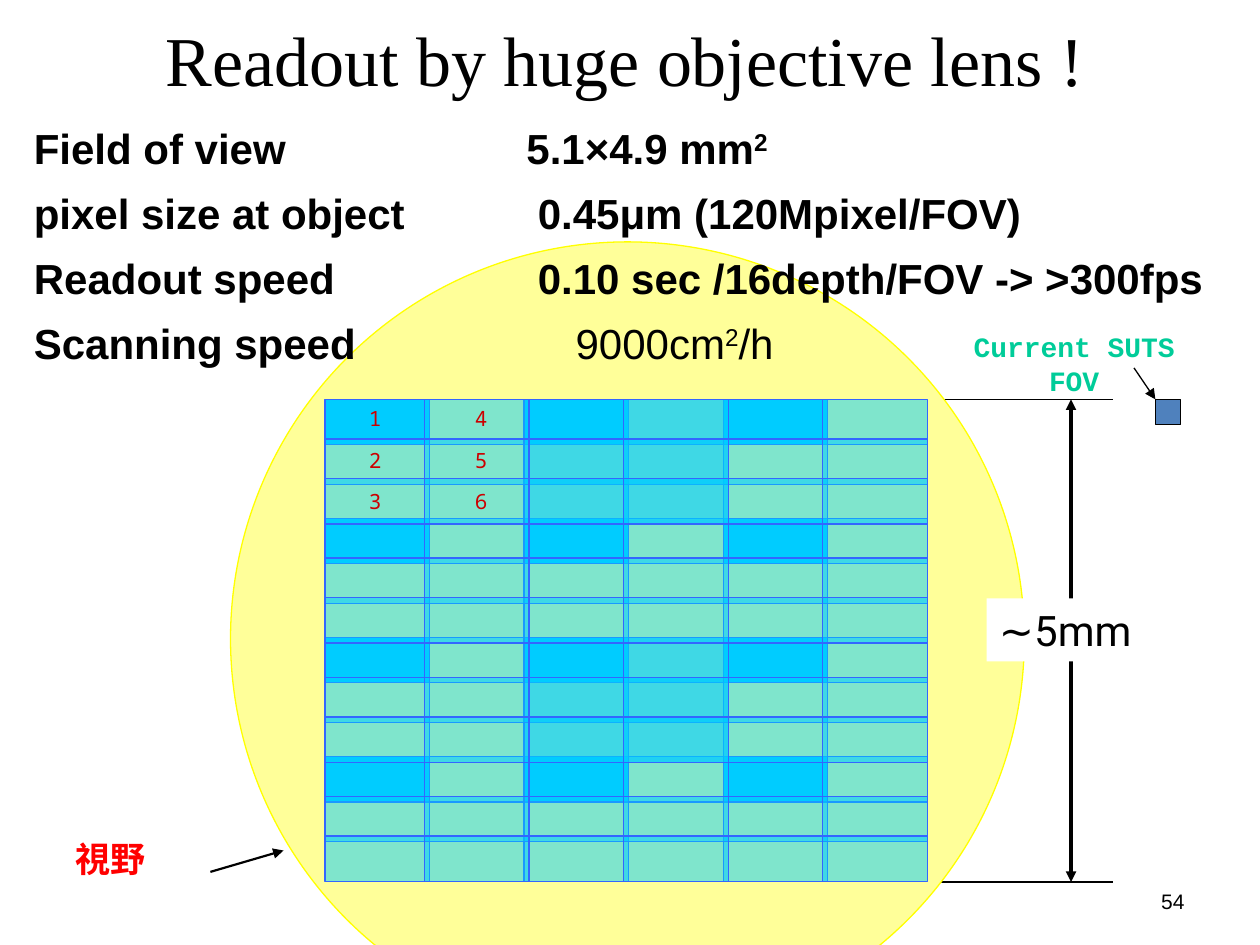
from lxml import etree
from pptx import Presentation
from pptx.dml.color import RGBColor
from pptx.enum.shapes import MSO_CONNECTOR, MSO_SHAPE
from pptx.enum.text import MSO_ANCHOR, PP_ALIGN
from pptx.oxml.ns import qn
from pptx.util import Inches, Pt

BLACK = RGBColor(0x00, 0x00, 0x00)
WHITE = RGBColor(0xFF, 0xFF, 0xFF)
PALE_YELLOW = RGBColor(0xFF, 0xFF, 0x99)
YELLOW = RGBColor(0xFF, 0xFF, 0x00)
SKY = RGBColor(0x00, 0xCC, 0xFF)
TILE_EDGE = RGBColor(0x33, 0x66, 0xFF)
STEEL = RGBColor(0x4F, 0x81, 0xBD)
GREEN = RGBColor(0x00, 0xCC, 0x99)
RED = RGBColor(0xFF, 0x00, 0x00)
DARK_RED = RGBColor(0xCC, 0x00, 0x00)

deck = Presentation()
deck.slide_width = Inches(10)
deck.slide_height = Inches(7.5)
page = deck.slides.add_slide(deck.slide_layouts[6])


def add_text(text, left, top, width, height, font_name, size, color=BLACK,
             align=PP_ALIGN.LEFT, bold=False):
    box = page.shapes.add_textbox(Inches(left), Inches(top), Inches(width), Inches(height))
    box.text_frame.word_wrap = True
    para = box.text_frame.paragraphs[0]
    para.text = text
    para.alignment = align
    para.font.name = font_name
    para.font.size = Pt(size)
    para.font.color.rgb = color
    para.font.bold = bold
    return box


def add_block(preset, left, top, width, height, fill, edge):
    block = page.shapes.add_shape(preset, Inches(left), Inches(top), Inches(width), Inches(height))
    block.shadow.inherit = False
    block.fill.solid()
    block.fill.fore_color.rgb = fill
    block.line.color.rgb = edge
    block.line.width = Pt(0.75)
    return block


add_text("Readout by huge objective lens !", 0, 0.08, 9.92, 0.77,
         "Times New Roman", 40, align=PP_ALIGN.CENTER)

# Lines: start x, start y, end x, end y, width, arrowheads
LINES = [
    (8.5, 3.17, 8.5, 7, 2, ("headEnd", "tailEnd")),
    (2.75, 3.17, 8.83, 3.17, 0.75, ()),
    (2.75, 7, 8.83, 7, 0.75, ()),
    (9, 2.92, 9.17, 3.17, 0.75, ("tailEnd",)),
    (1.67, 6.92, 2.25, 6.75, 1.25, ("tailEnd",)),
]
for x1, y1, x2, y2, width, ends in LINES:
    line = page.shapes.add_connector(MSO_CONNECTOR.STRAIGHT, Inches(x1), Inches(y1),
                                     Inches(x2), Inches(y2))
    line.line.color.rgb = BLACK
    line.line.width = Pt(width)
    outline = line.line._get_or_add_ln()
    for end in ends:
        etree.SubElement(outline, qn(f"a:{end}"), type="triangle")
    etree.SubElement(line._element.spPr, qn("a:effectLst"))

# Lens field, height label and current field of view
add_block(MSO_SHAPE.OVAL, 1.83, 1.92, 6.3, 6.3, PALE_YELLOW, YELLOW)
height_label = add_text("∼5mm", 7.83, 4.75, 1.33, 0.5, "Roboto", 24)
height_label.fill.solid()
height_label.fill.fore_color.rgb = WHITE
add_block(MSO_SHAPE.RECTANGLE, 9.17, 3.17, 0.2, 0.2, STEEL, BLACK)
add_text("Current SUTS FOV", 7.38, 2.57, 2.29, 0.37, "Courier New", 16, GREEN,
         PP_ALIGN.CENTER, True)
add_text("視野", 0, 6.6, 1.75, 0.44, "Courier New", 20, RED, PP_ALIGN.CENTER, True)

# Specifications: label, tab stop, value, superscript, rest, bold value
SPECS = [
    ("Field of view", 3.91, "5.1×4.9 mm", "2", "", True),
    ("pixel size at object", 4, "0.45μm (120Mpixel/FOV)", "", "", True),
    ("Readout speed", 4, "0.10 sec /16depth/FOV -> >300fps", "", "", True),
    ("Scanning speed", 4.3, "9000cm", "2", "/h", False),
]
spec_box = page.shapes.add_textbox(Inches(0.17), Inches(0.92), Inches(9.75), Inches(2.08))
spec_box.text_frame.word_wrap = True
for index, (label, stop, value, power, rest, bold) in enumerate(SPECS):
    para = spec_box.text_frame.paragraphs[0] if index == 0 else spec_box.text_frame.add_paragraph()
    if index:
        para.space_before = Pt(8.4)
    tabs = etree.SubElement(para._p.get_or_add_pPr(), qn("a:tabLst"))
    etree.SubElement(tabs, qn("a:tab"), pos=str(Inches(stop)), algn="l")
    para.font.name = "Arial"
    para.font.size = Pt(24)
    para.font.color.rgb = BLACK
    for text, is_bold in ((label + "\t", True), (value, bold), (power, bold), (rest, bold)):
        if text:
            span = para.add_run()
            span.text = text
            span.font.bold = is_bold
            if text == power:
                span.font._element.set("baseline", "30000")

# Overlapping tiles: 6 columns by 12 rows, laid down in six interleaved passes
GRID_LEFT, GRID_TOP = 2.58, 3.17
COLUMN_STEP, ROW_STEP = 0.79, 0.315
PASSES = [(0, 0), (1, 0), (0, 1), (0, 2), (1, 1), (1, 2)]
for first_column, first_row in PASSES:
    for column in range(first_column, 6, 2):
        for row in range(first_row, 12, 3):
            opaque = (first_column, first_row) == (0, 0)
            doubled = not opaque and column in (2, 3) and row in (0, 1, 2, 6, 7, 8)
            for _ in range(2 if doubled else 1):
                tile = add_block(MSO_SHAPE.RECTANGLE, GRID_LEFT + column * COLUMN_STEP,
                                 GRID_TOP + row * ROW_STEP, 0.83, 0.36, SKY, TILE_EDGE)
                if not opaque:
                    tint = tile._element.spPr.find(qn("a:solidFill"))[0]
                    etree.SubElement(tint, qn("a:alpha"), val="50000")

for number in range(6):
    column, row = divmod(number, 3)
    add_text(str(number + 1), 2.83 + column * 0.84, 3.17 + row * 0.33, 0.3, 0.3,
             "Noto Sans Mono", 12, DARK_RED)

page_number = add_text("54", 7.17, 6.95, 2.33, 0.4, "Arial", 12, align=PP_ALIGN.RIGHT)
page_number.text_frame.vertical_anchor = MSO_ANCHOR.MIDDLE

deck.save("out.pptx")
